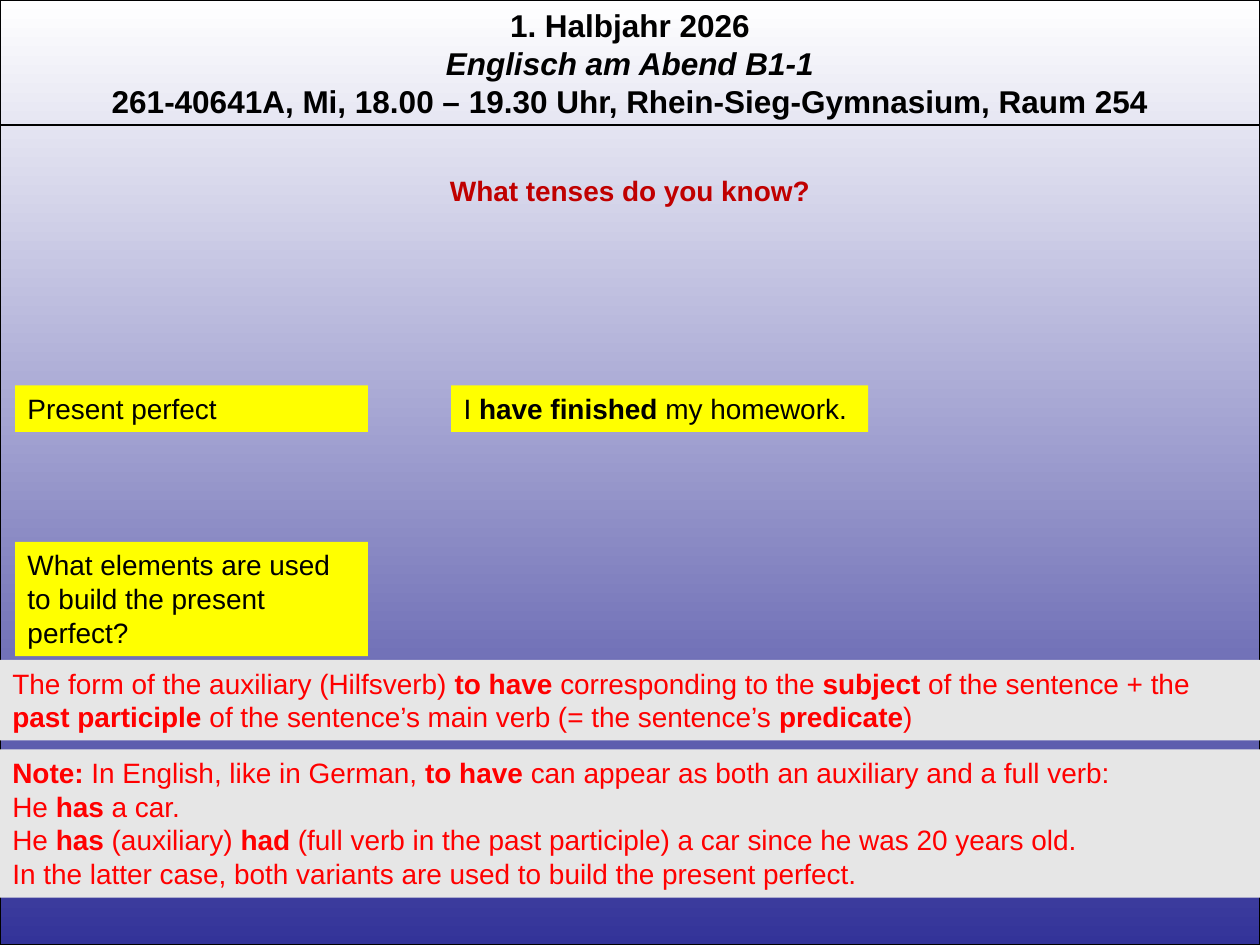
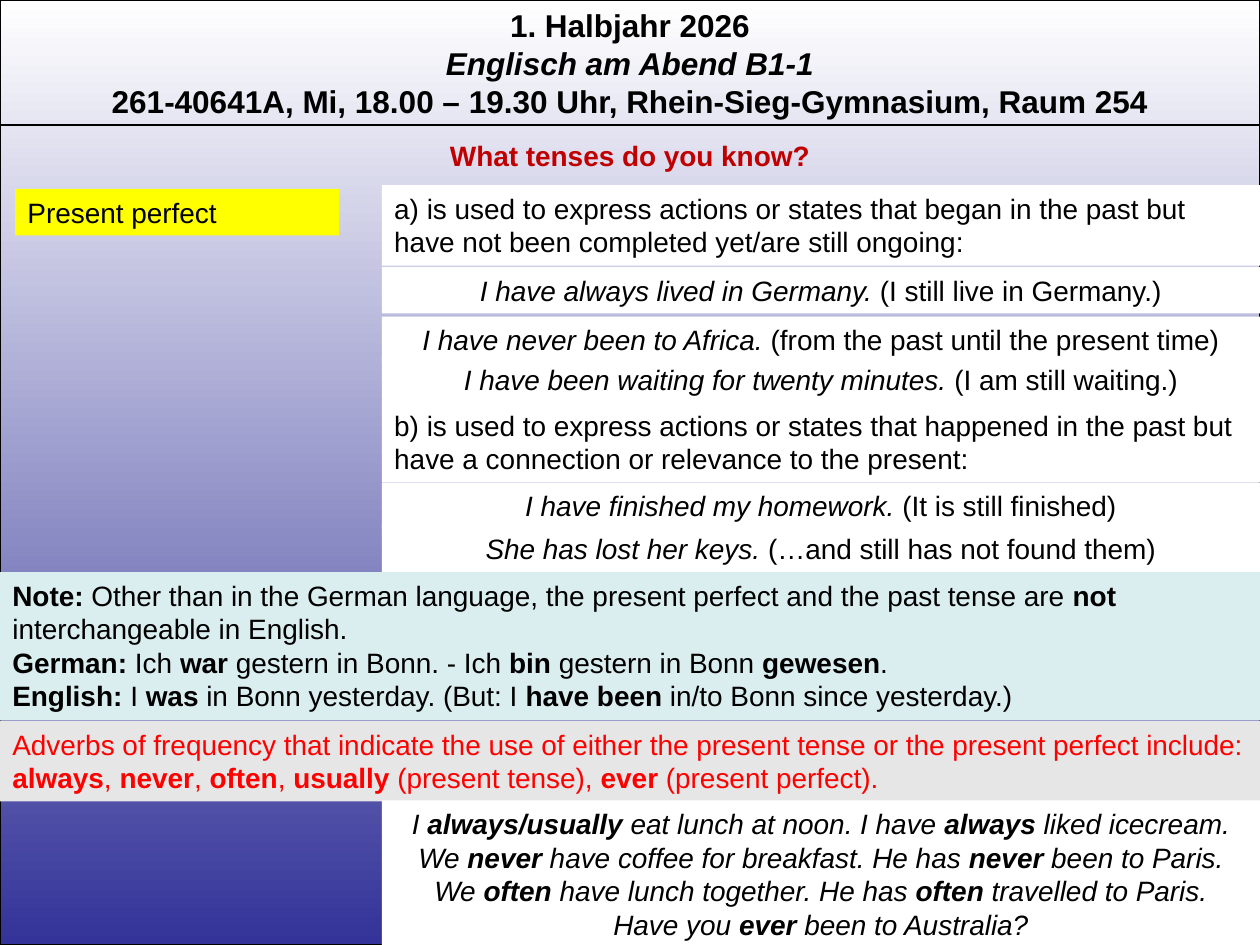
from lxml import etree
from pptx import Presentation
from pptx import util as u
from pptx.dml.color import RGBColor
from pptx.enum import shapes, text
from pptx.oxml.ns import qn

# Shared look
BLACK = RGBColor(0x00, 0x00, 0x00)
WHITE = RGBColor(0xFF, 0xFF, 0xFF)
INDIGO = RGBColor(0x33, 0x33, 0x99)
DARK_RED = RGBColor(0xC0, 0x00, 0x00)
RED = RGBColor(0xFF, 0x00, 0x00)
YELLOW = RGBColor(0xFF, 0xFF, 0x00)
GREY = RGBColor(0xE6, 0xE6, 0xE6)
PALE_TEAL = RGBColor(0xDA, 0xED, 0xEF)

FONT = "Arial"
SLIDE_WIDTH, SLIDE_HEIGHT = 720, 540
BAND_WIDTH = 723
LEFT_LABEL = 8.64
RIGHT_COLUMN = 218.2
RIGHT_WIDTH = SLIDE_WIDTH - RIGHT_COLUMN
LINE_HEIGHT, PADDING = 19.4, 7.2

LEFT, CENTER = text.PP_ALIGN.LEFT, text.PP_ALIGN.CENTER

HEADER = [
    "*1. Halbjahr 2026*",
    "*_Englisch am Abend B1-1_*",
    "*261-40641A, Mi, 18.00 – 19.30 Uhr, Rhein-Sieg-Gymnasium, Raum 254*",
]


def set_attributes(target, values):
    for name, value in values.items():
        setattr(target, name, value)


def box_height(lines):
    return lines * LINE_HEIGHT + PADDING


def write_text(shape, paragraphs, color=BLACK, align=LEFT, size=16):
    """Write paragraphs in which * switches bold and _ switches italic."""
    frame = shape.text_frame
    set_attributes(frame, {
        "word_wrap": True,
        "auto_size": text.MSO_AUTO_SIZE.SHAPE_TO_FIT_TEXT,
        "vertical_anchor": text.MSO_ANCHOR.TOP,
    })
    for number, content in enumerate(paragraphs):
        paragraph = frame.add_paragraph() if number else frame.paragraphs[0]
        paragraph.alignment = align
        italic = False
        for index, weight_part in enumerate(content.split("*")):
            for position, words in enumerate(weight_part.split("_")):
                if position:
                    italic = not italic
                if not words:
                    continue
                run = paragraph.add_run()
                run.text = words
                set_attributes(run.font, {
                    "name": FONT, "size": u.Pt(size),
                    "bold": index % 2 == 1, "italic": italic,
                })
                run.font.color.rgb = color


def add_rectangle(slide, left, top, width, height):
    shape = slide.shapes.add_shape(
        shapes.MSO_SHAPE.RECTANGLE,
        u.Pt(left), u.Pt(top), u.Pt(width), u.Pt(height))
    shape.shadow.inherit = False
    return shape


def add_box(slide, left, top, width, lines, paragraphs, fill, **style):
    shape = add_rectangle(slide, left, top, width, box_height(lines))
    shape.fill.solid()
    shape.fill.fore_color.rgb = fill
    shape.line.fill.background()
    write_text(shape, paragraphs, **style)


def add_label(slide, left, top, width, lines, content):
    add_box(slide, left, top, width, lines, [content], YELLOW)


def add_band(slide, top, lines, paragraphs):
    add_box(slide, 0, top, BAND_WIDTH, lines, paragraphs, GREY, color=RED)


def add_rule(slide, top, lines, paragraphs, align=LEFT):
    add_box(slide, RIGHT_COLUMN, top, RIGHT_WIDTH, lines, paragraphs, WHITE,
            align=align)


def add_titled_slide(presentation, layout, top):
    slide = presentation.slides.add_slide(layout)
    title = slide.shapes.title
    set_attributes(title, {
        "left": 0, "top": u.Pt(top),
        "width": u.Pt(SLIDE_WIDTH), "height": u.Pt(box_height(1)),
    })
    write_text(title, ["*What tenses do you know?*"], DARK_RED, CENTER)
    return slide


def build_backdrop(slide, layout):
    """Draw backdrop, course header and rule, then hand them to the layout."""
    backdrop = add_rectangle(slide, 0, 0, SLIDE_WIDTH, SLIDE_HEIGHT)
    backdrop.fill.gradient()
    backdrop.fill.gradient_angle = 270
    for stop, color in zip(backdrop.fill.gradient_stops, (WHITE, INDIGO)):
        stop.color.rgb = color

    header = slide.shapes.add_textbox(0, 0, u.Pt(SLIDE_WIDTH), u.Pt(72.7))
    write_text(header, HEADER, align=CENTER, size=18)

    line = slide.shapes.add_connector(
        shapes.MSO_CONNECTOR.STRAIGHT,
        0, u.Pt(71.4), u.Pt(SLIDE_WIDTH), u.Pt(71.4))
    etree.SubElement(line._element.spPr, qn("a:effectLst"))

    for shape in (backdrop, line):
        shape.line.color.rgb = BLACK
        shape.line.width = u.Pt(0.75)
    for shape in (backdrop, header, line):
        layout.shapes._spTree.append(shape._element)


def fill_formation_slide(slide):
    # Tense, example and question
    add_label(slide, LEFT_LABEL, 220.3, 201.6, 1, "Present perfect")
    add_label(slide, 257.8, 220.3, 238.3, 1,
              "I *have finished *my homework.")
    add_label(slide, LEFT_LABEL, 309.6, 201.6, 3,
              "What elements are used to build the present perfect?")

    # Answer and note
    add_band(slide, 377.1, 2, [
        "The form of the auxiliary (Hilfsverb) *to have *corresponding to the "
        "*subject* of the sentence + the *past participle *of the sentence’s "
        "main verb (= the sentence’s *predicate*)"])
    add_band(slide, 428.2, 4, [
        "*Note: *In English, like in German, *to have *can appear as both "
        "an auxiliary and a full verb:",
        "He *has* a car.",
        "He *has *(auxiliary) *had *(full verb in the past participle) "
        "a car since he was 20 years old.",
        "In the latter case, both variants are used to build the present "
        "perfect."])


def fill_usage_slide(slide):
    add_label(slide, LEFT_LABEL, 108, 185, 1, "Present perfect")

    # Uses of the tense
    add_rule(slide, 105.8, 2, [
        "a) is used to express actions or states that began in the past but "
        "have not been completed yet/are still ongoing:"])
    add_rule(slide, 229.8, 2, [
        "b) is used to express actions or states that happened in the past "
        "but have a connection or relevance to the present:"])

    # Example sentences
    examples = [
        (152.6, "_I have always lived in Germany. _(I still live in Germany.)"),
        (203.6, "_I have been waiting for twenty minutes. _"
                "(I am still waiting.)"),
        (275.9, "_I have finished my homework. _(It is still finished)"),
        (300.4, "_She has lost her keys. _(…and still has not found them)"),
        (180.9, "_I have never been to Africa. _"
                "(from the past until the present time)"),
    ]
    for top, sentence in examples:
        add_rule(slide, top, 1, [sentence], CENTER)

    # Notes on German and on adverbs
    add_box(slide, 0, 326.9, SLIDE_WIDTH, 4, [
        "*Note: *Other than in the German language, the present perfect and "
        "the past tense are *not* interchangeable in English.",
        "*German: *Ich *war *gestern in Bonn. - Ich *bin *gestern in Bonn "
        "*gewesen*.",
        "*English: *I *was* in Bonn yesterday. (But: I *have been* in/to "
        "Bonn since yesterday.)"], PALE_TEAL)
    add_band(slide, 411.9, 2, [
        "Adverbs of frequency that indicate the use of either the present "
        "tense or the present perfect include:",
        "*always*, *never*, *often*, *usually* (present tense), *ever* "
        "(present perfect)."])
    add_rule(slide, 457.4, 4, [
        "_I *always/usually *eat lunch at noon. I have *always *"
        "liked icecream._",
        "_We *never *have coffee for breakfast. He has *never *"
        "been to Paris._",
        "_We *often *have lunch together. He has *often *"
        "travelled to Paris._",
        "_Have you *ever *been to Australia?_"], CENTER)


def main():
    presentation = Presentation()
    presentation.slide_width = u.Pt(SLIDE_WIDTH)
    presentation.slide_height = u.Pt(SLIDE_HEIGHT)

    # Keep only the title in the title-only layout
    layout = presentation.slide_layouts[5]
    for placeholder in list(layout.placeholders)[1:]:
        layout.shapes._spTree.remove(placeholder._element)

    formation = add_titled_slide(presentation, layout, 95.8)
    build_backdrop(formation, layout)
    fill_formation_slide(formation)
    fill_usage_slide(add_titled_slide(presentation, layout, 75.8))

    presentation.save("out.pptx")


if __name__ == "__main__":
    main()
